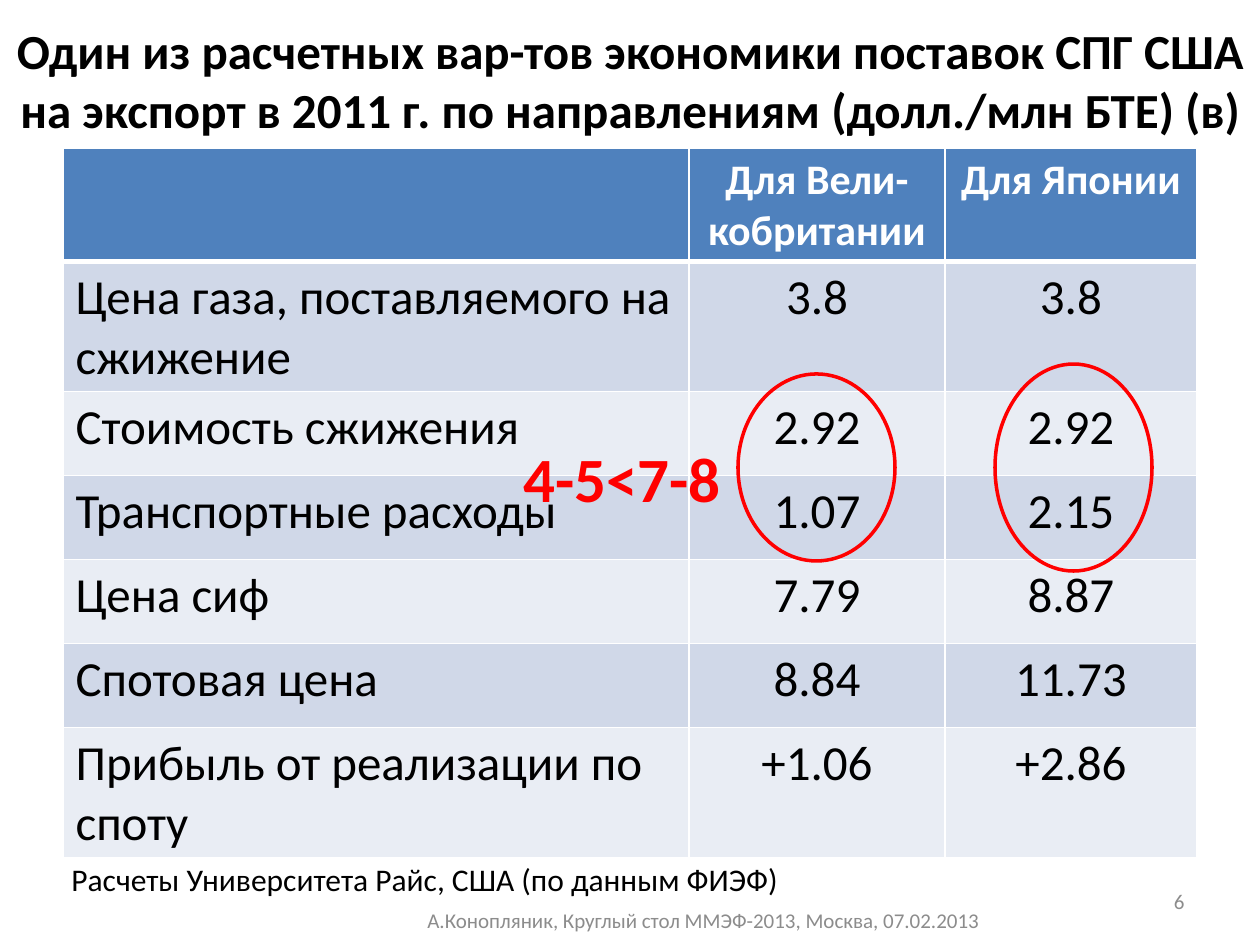
from dataclasses import dataclass
from lxml.etree import SubElement
from pptx import Presentation
from pptx.dml.color import RGBColor
from pptx.enum.shapes import MSO_SHAPE
from pptx.enum.text import MSO_ANCHOR, PP_ALIGN
from pptx.oxml.ns import qn
from pptx.util import Pt


@dataclass(frozen=True)
class Theme:
    font: str = "Calibri"
    black: str = "000000"
    white: str = "FFFFFF"
    gray: str = "8C8C8C"
    red: str = "FF0000"
    head: str = "4F81BD"
    bands: tuple = ("D0D8E8", "E9EDF4")
    title: int = 28
    label: int = 24
    body: int = 28
    mark: int = 36
    note: int = 18
    foot: int = 12


THEME = Theme()
SCALE = 914400 / 126
LEFT, MID, RIGHT = PP_ALIGN.LEFT, PP_ALIGN.CENTER, PP_ALIGN.RIGHT

HEADS = ["", "Для Вели-кобритании", "Для Японии"]
ROWS = [
    ["Цена газа, поставляемого на сжижение", "3.8", "3.8"],
    ["Стоимость сжижения", "2.92", "2.92"],
    ["Транспортные расходы", "1.07", "2.15"],
    ["Цена сиф", "7.79", "8.87"],
    ["Спотовая цена", "8.84", "11.73"],
    ["Прибыль от реализации по споту", "+1.06", "+2.86"],
]


def px(n):
    return round(n * SCALE)


def apply(item, form):
    for name, value in form.items():
        setattr(item, name, value)


def write(frame, text, size, color, align=LEFT, bold=False):
    para = frame.paragraphs[0]
    para.alignment = align
    run = para.add_run()
    run.text = text
    apply(run.font, {"name": THEME.font, "size": Pt(size), "bold": bold})
    run.font.color.rgb = RGBColor.from_string(color)


def label(slide, box, text, size, color, align=LEFT, bold=False,
          anchor=MSO_ANCHOR.TOP, wrap=True):
    frame = slide.shapes.add_textbox(*map(px, box)).text_frame
    apply(frame, {"word_wrap": wrap, "vertical_anchor": anchor})
    write(frame, text, size, color, align, bold)


def border(cell, base):
    props = cell._tc.get_or_add_tcPr()
    widths = {"a:lnL": 1, "a:lnR": 1, "a:lnT": 1, "a:lnB": base}
    for spot, (tag, width) in enumerate(widths.items()):
        line = SubElement(props, qn(tag), w=str(Pt(width)))
        fill = SubElement(line, qn("a:solidFill"))
        SubElement(fill, qn("a:srgbClr"), val=THEME.white)
        props.insert(spot, line)


def grid(slide, box):
    left, top, width, high = box
    cols = [626, 256, width - 626 - 256]
    rows = [110, 126] + [84] * (len(ROWS) - 1)
    table = slide.shapes.add_table(
        len(rows), len(cols), *map(px, (left, top, width, high))).table
    for col, size in zip(table.columns, cols):
        col.width = px(size)
    for row, size in zip(table.rows, rows):
        row.height = px(size)
    for r, texts in enumerate([HEADS] + ROWS):
        top_row = r == 0
        fill = THEME.head if top_row else THEME.bands[(r - 1) % 2]
        size = THEME.label if top_row else THEME.body
        color = THEME.white if top_row else THEME.black
        for c, text in enumerate(texts):
            cell = table.cell(r, c)
            cell.fill.solid()
            cell.fill.fore_color.rgb = RGBColor.from_string(fill)
            border(cell, 3 if top_row else 1)
            if text:
                write(cell.text_frame, text, size, color,
                      MID if c else LEFT, top_row)


def ring(slide, box):
    shape = slide.shapes.add_shape(MSO_SHAPE.OVAL, *map(px, box))
    shape.shadow.inherit = False
    shape.fill.background()
    shape.line.width = Pt(2)
    shape.line.color.rgb = RGBColor.from_string(THEME.red)


def marks(slide, box):
    left, top, width, high = box
    ring(slide, (left + 227, top + 10, 157, 187))
    ring(slide, (left + width - 157, top, 157, high))
    label(slide, (left, top + 69, 227, 90), "4-5<7-8",
          THEME.mark, THEME.red, bold=True)


def footer(slide, box):
    left, top, width, high = box
    style = {"size": THEME.foot, "color": THEME.gray,
             "anchor": MSO_ANCHOR.MIDDLE}
    label(slide, (left, top + 19, 699, high - 19),
          "А.Конопляник, Круглый стол ММЭФ-2013, Москва, 07.02.2013",
          align=MID, **style)
    label(slide, (left + width - 294, top, 294, high - 19), "6",
          align=RIGHT, **style)


def main():
    deck = Presentation()
    apply(deck, {"slide_width": px(1260), "slide_height": px(945)})
    slide = deck.slides.add_slide(deck.slide_layouts[6])
    label(slide, (0, 0, 1260, 158),
          "Один из расчетных вар-тов экономики поставок СПГ США "
          "на экспорт в 2011 г. по направлениям (долл./млн БТЕ) (в)",
          THEME.title, THEME.black, MID, True, MSO_ANCHOR.MIDDLE)
    footer(slide, (354, 876, 843, 69))
    grid(slide, (63, 148, 1134, 713))
    marks(slide, (511, 364, 641, 207))
    label(slide, (59, 854, 747, 50),
          "Расчеты Университета Райс, США (по данным ФИЭФ)",
          THEME.note, THEME.black, wrap=False)
    deck.save("out.pptx")


if __name__ == "__main__":
    main()
